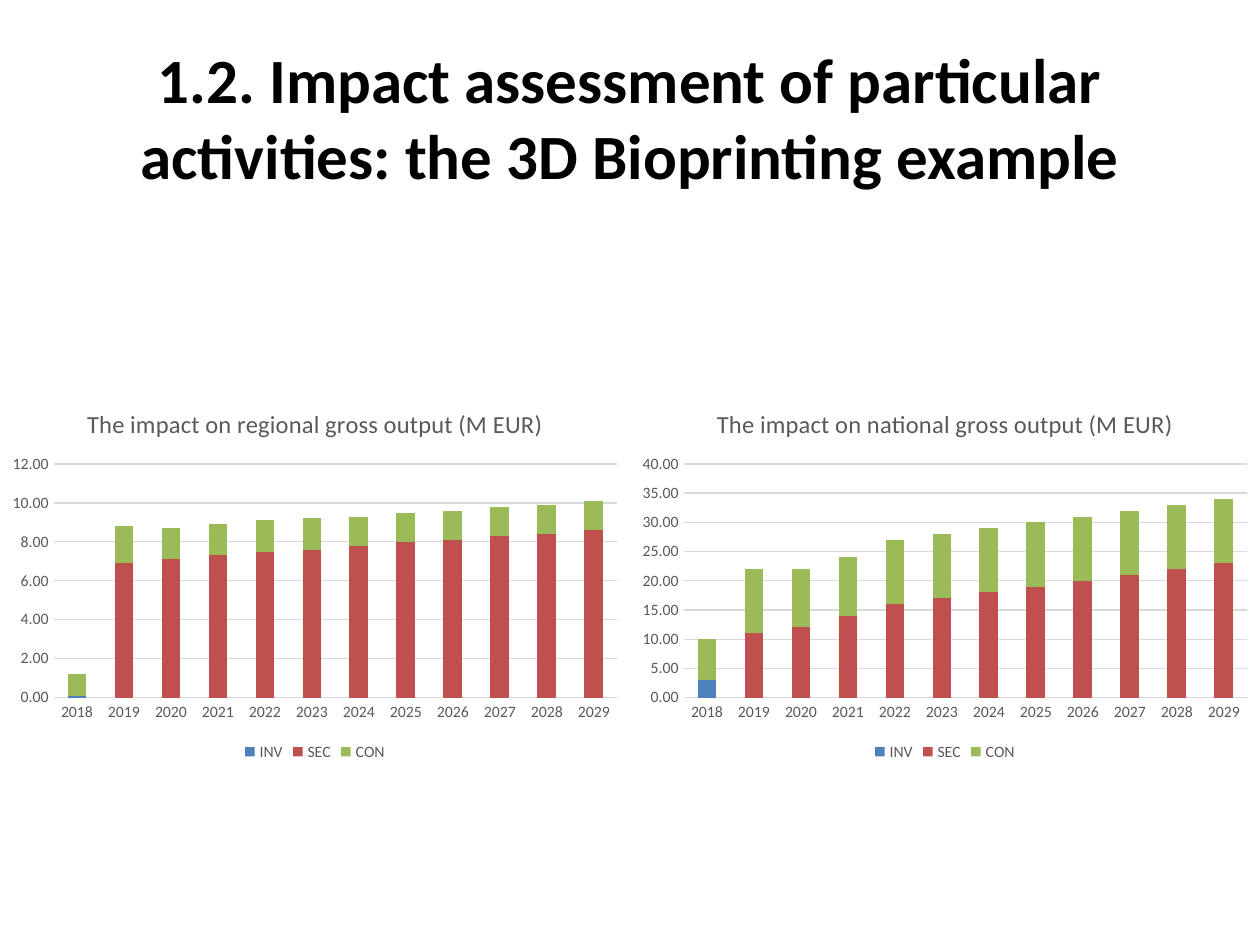
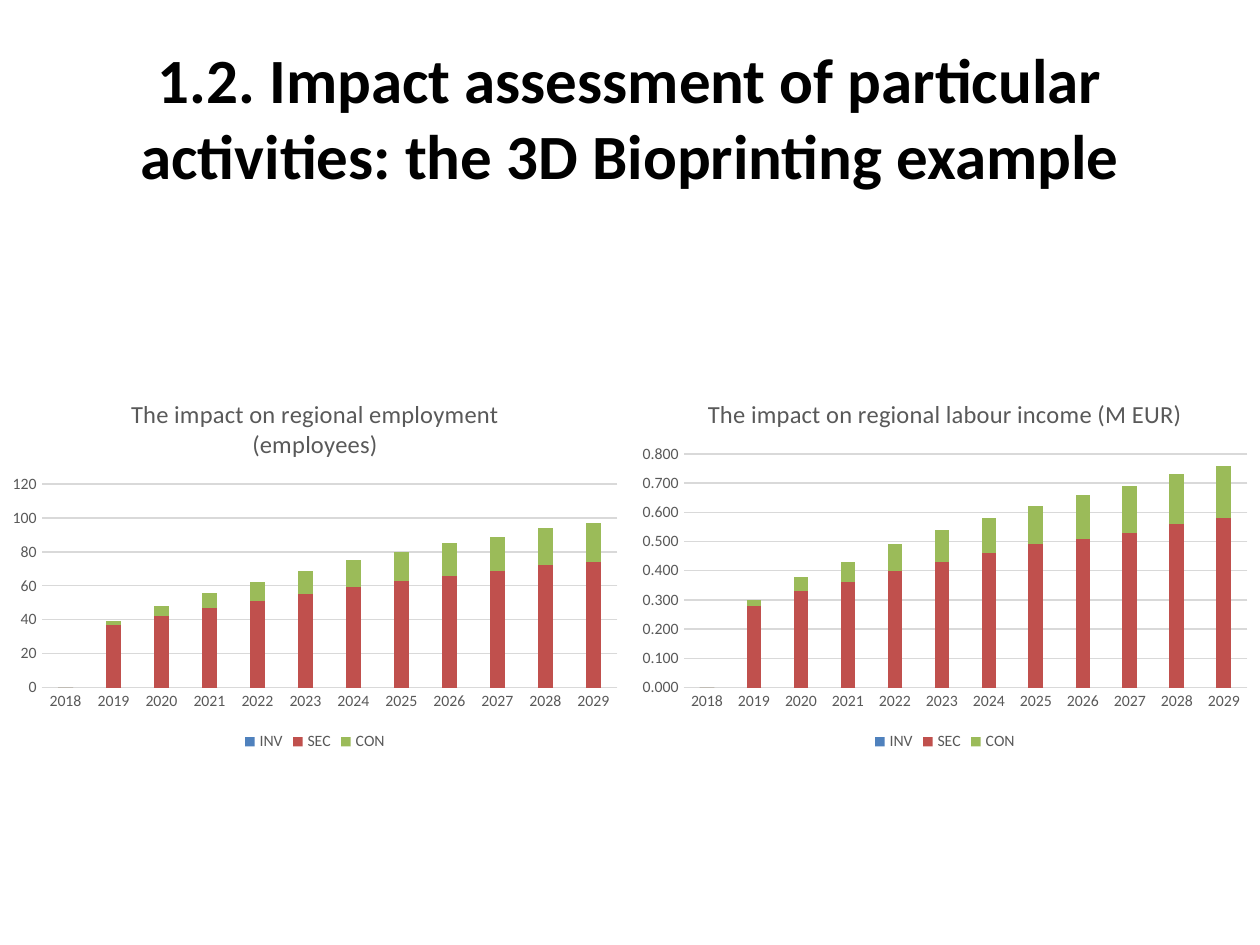
"""Build two slides of stacked column charts on the 3D bioprinting impact assessment."""
from dataclasses import dataclass

from pptx import Presentation
from pptx import util as u
from pptx.chart.data import CategoryChartData
from pptx.dml.color import RGBColor
from pptx.enum import chart as ch
from pptx.enum import text

FONT = "Calibri"
BLACK, GREY, RULE = "000000", "595959", "D9D9D9"
HEADING = "1.2. Impact assessment of particular activities: the 3D Bioprinting example"
YEARS = [str(year) for year in range(2018, 2030)]
EFFECT_COLOURS = {"INV": "4F81BD", "SEC": "C0504D", "CON": "9BBB59"}
PANEL_WIDTH, PANEL_HEIGHT = 5, 3


@dataclass(frozen=True)
class Impact:
    caption: str
    number_format: str
    top_value: float
    step: float
    investment_2018: float
    sector: list[float]
    consumption: list[float]

    def effects(self) -> dict[str, list[float]]:
        investment = [self.investment_2018] + [0] * (len(YEARS) - 1)
        return dict(zip(EFFECT_COLOURS, (investment, self.sector, self.consumption)))


@dataclass(frozen=True)
class ImpactSlide:
    charts_top: float
    gap_width: int
    impacts: list[Impact]


SLIDES = [
    ImpactSlide(3.08, 150, [
        Impact("The impact on regional gross output (M EUR)", "0.00", 12, 2, 0.1,
               [0, 6.9, 7.1, 7.3, 7.5, 7.6, 7.8, 8, 8.1, 8.3, 8.4, 8.6],
               [1.1, 1.9, 1.6, 1.6, 1.6, 1.6, 1.5, 1.5, 1.5, 1.5, 1.5, 1.5]),
        Impact("The impact on national gross output (M EUR)", "0.00", 40, 5, 3,
               [0, 11, 12, 14, 16, 17, 18, 19, 20, 21, 22, 23],
               [7, 11, 10, 10, 11, 11, 11, 11, 11, 11, 11, 11]),
    ]),
    ImpactSlide(3, 219, [
        Impact("The impact on regional employment (employees)", "0", 120, 20, 0,
               [0, 37, 42, 47, 51, 55, 59, 63, 66, 69, 72, 74],
               [0, 2, 6, 9, 11, 14, 16, 17, 19, 20, 22, 23]),
        Impact("The impact on regional labour income (M EUR)", "0.000", 0.8, 0.1, 0,
               [0, 0.28, 0.33, 0.36, 0.4, 0.43, 0.46, 0.49, 0.51, 0.53, 0.56, 0.58],
               [0, 0.02, 0.05, 0.07, 0.09, 0.11, 0.12, 0.13, 0.15, 0.16, 0.17, 0.18]),
    ]),
]


def colour(hex_code: str) -> RGBColor:
    return RGBColor.from_string(hex_code)


def style_font(font, size: float, hex_code: str, bold: bool = False) -> None:
    font.name, font.size, font.bold = FONT, u.Pt(size), bold
    font.color.rgb = colour(hex_code)


def style_rule(line) -> None:
    line.color.rgb = colour(RULE)
    line.width = u.Pt(0.75)


def add_heading(slide) -> None:
    heading = slide.shapes.title
    heading.left, heading.top = u.Inches(0.5), u.Inches(0.3)
    heading.width, heading.height = u.Inches(9), u.Inches(1.25)
    frame = heading.text_frame
    frame.text = HEADING
    frame.auto_size = text.MSO_AUTO_SIZE.NONE
    frame.vertical_anchor = text.MSO_ANCHOR.MIDDLE
    paragraph = frame.paragraphs[0]
    paragraph.alignment = text.PP_ALIGN.CENTER
    style_font(paragraph.font, 36, BLACK, bold=True)


def style_axes(chart, impact: Impact) -> None:
    years, amounts = chart.category_axis, chart.value_axis
    for axis in (years, amounts):
        axis.major_tick_mark = axis.minor_tick_mark = ch.XL_TICK_MARK.NONE
        style_font(axis.tick_labels.font, 9, GREY)
    style_rule(years.format.line)
    amounts.format.line.fill.background()
    amounts.has_major_gridlines = True
    style_rule(amounts.major_gridlines.format.line)
    amounts.minimum_scale, amounts.maximum_scale = 0, impact.top_value
    amounts.major_unit = impact.step
    amounts.tick_labels.number_format = impact.number_format
    amounts.tick_labels.number_format_is_linked = False


def add_impact_chart(slide, impact: Impact, left: float, top: float, gap_width: int) -> None:
    data = CategoryChartData(number_format=impact.number_format)
    data.categories = YEARS
    for effect, values in impact.effects().items():
        data.add_series(effect, values)
    chart = slide.shapes.add_chart(
        ch.XL_CHART_TYPE.COLUMN_STACKED, u.Inches(left), u.Inches(top),
        u.Inches(PANEL_WIDTH), u.Inches(PANEL_HEIGHT), data).chart
    style_font(chart.font, 10, BLACK)

    chart.has_title = True
    chart.chart_title.include_in_layout = False
    caption = chart.chart_title.text_frame
    caption.text = impact.caption
    style_font(caption.paragraphs[0].font, 14, GREY)

    chart.has_legend = True
    chart.legend.position = ch.XL_LEGEND_POSITION.BOTTOM
    chart.legend.include_in_layout = False
    style_font(chart.legend.font, 9, GREY)
    style_axes(chart, impact)

    columns = chart.plots[0]
    columns.gap_width, columns.overlap = gap_width, 100
    columns.vary_by_categories = False
    for effect in columns.series:
        effect.format.fill.solid()
        effect.format.fill.fore_color.rgb = colour(EFFECT_COLOURS[effect.name])
        effect.invert_if_negative = False


def main() -> None:
    deck = Presentation()
    deck.slide_width, deck.slide_height = u.Inches(10), u.Inches(7.5)
    title_only = deck.slide_layouts.get_by_name("Title Only")
    for content in SLIDES:
        slide = deck.slides.add_slide(title_only)
        add_heading(slide)
        for column, impact in enumerate(content.impacts):
            add_impact_chart(slide, impact, column * PANEL_WIDTH,
                             content.charts_top, content.gap_width)
    deck.save("out.pptx")


if __name__ == "__main__":
    main()
